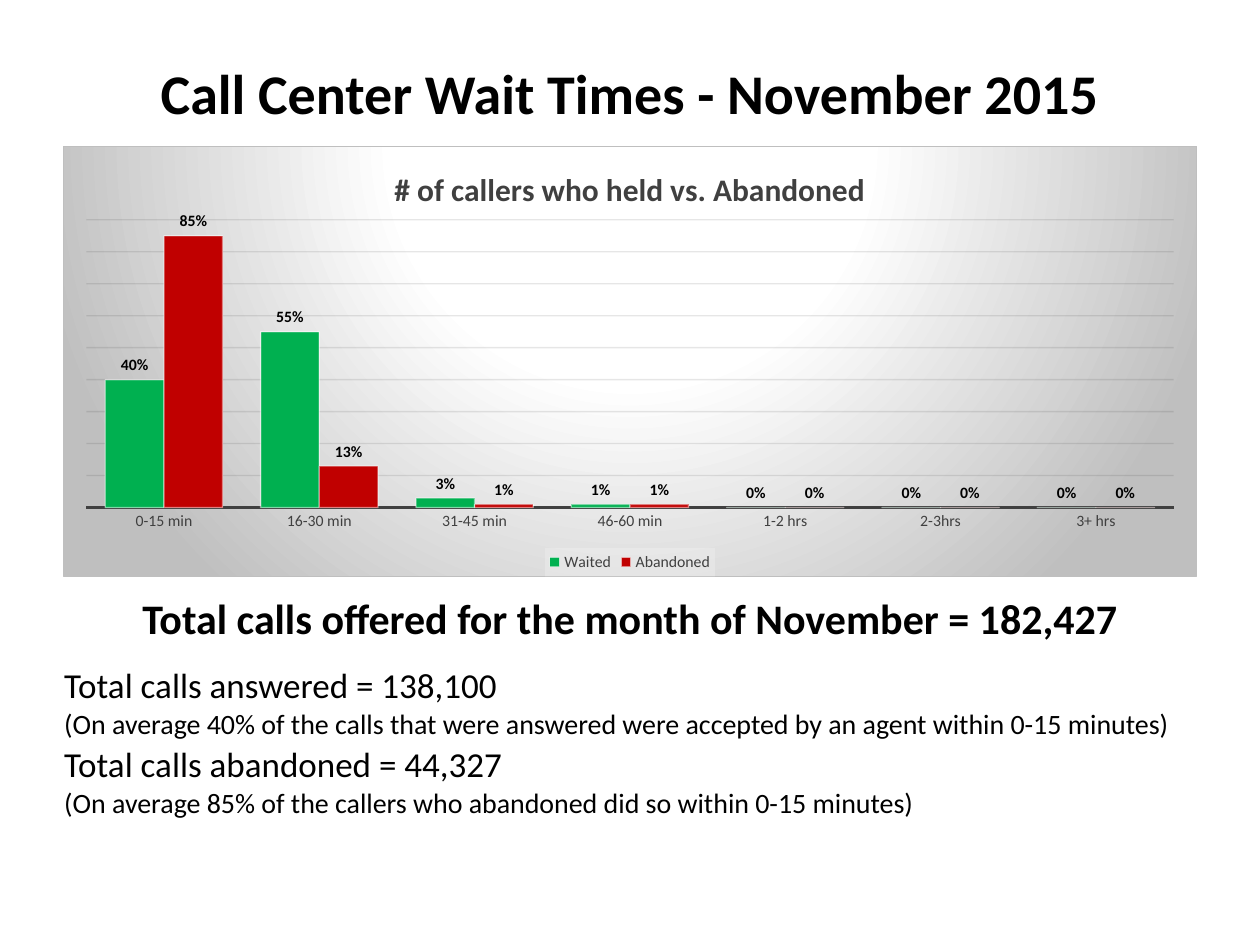
from dataclasses import dataclass

from lxml.etree import SubElement
from pptx import Presentation
from pptx.chart.data import CategoryChartData
from pptx.dml.color import RGBColor
from pptx.enum.chart import XL_CHART_TYPE, XL_LABEL_POSITION, XL_LEGEND_POSITION, XL_TICK_MARK
from pptx.enum.text import MSO_ANCHOR, PP_ALIGN
from pptx.oxml import parse_xml
from pptx.oxml.ns import nsdecls, qn
from pptx.util import Inches, Pt


@dataclass(frozen=True)
class Theme:
    font: str = "Calibri"
    black: str = "000000"
    dark: str = "404040"
    grid: str = "0D0D0D"
    edge: str = "BFBFBF"
    pale: str = "F2F2F2"
    white: str = "FFFFFF"
    title: int = 32
    total: int = 24
    chart_title: int = 18
    figure: int = 20
    remark: int = 16
    base: int = 10
    label: int = 9


THEME = Theme()
TITLE = "Call Center Wait Times - November 2015"
CHART_TITLE = "# of callers who held vs. Abandoned"
WAITS = ["0-15 min", "16-30 min", "31-45 min", "46-60 min", "1-2 hrs", "2-3hrs", "3+ hrs"]
SERIES = [
    ("Waited", "00B050", [0.4, 0.55, 0.03, 0.01, 0, 0, 0]),
    ("Abandoned", "C00000", [0.85, 0.13, 0.01, 0.01, 0, 0, 0]),
]
TOTALS = [
    (0.56, PP_ALIGN.CENTER, MSO_ANCHOR.TOP,
     [("Total calls offered for the month of November = 182,427", THEME.total, True)]),
    (0.61, PP_ALIGN.LEFT, MSO_ANCHOR.MIDDLE,
     [("Total calls answered = 138,100", THEME.figure, False),
      ("(On average 40% of the calls that were answered were accepted by an agent"
       " within 0-15 minutes)", THEME.remark, False)]),
    (0.61, PP_ALIGN.LEFT, MSO_ANCHOR.MIDDLE,
     [("Total calls abandoned = 44,327", THEME.figure, False),
      ("(On average 85% of the callers who abandoned did so within 0-15 minutes)",
       THEME.remark, False)]),
]
WIDTH, HEIGHT = Inches(10), Inches(7.5)
LEFT, SPAN = round(WIDTH * 0.05), round(WIDTH * 0.9)
TITLE_TOP, CHART_TOP, TABLE_TOP = Inches(0.3), Inches(1.16), Inches(4.71)
CHART_HEIGHT = Inches(3.42)
PLOT = {"x": 0.02, "y": 0.17, "w": 0.96, "h": 0.67}


def style(font, size, color=THEME.black, bold=False):
    font.name, font.size, font.bold = THEME.font, Pt(size), bold
    font.color.rgb = RGBColor.from_string(color)


def add_span(para, text, size, color=THEME.black, bold=False):
    span = para.add_run()
    span.text = text
    style(span.font, size, color, bold)


def set_line(line, color, width, opacity=100):
    line.color.rgb = RGBColor.from_string(color)
    line.width = Pt(width)
    if opacity < 100:
        shade = line.fill._xPr.find(qn("a:solidFill"))[0]
        SubElement(shade, qn("a:alpha"), val=str(opacity * 1000))


def shape_properties(body):
    return parse_xml(f'<c:spPr {nsdecls("c", "a")}>{body}</c:spPr>')


def decorate(chart):
    stops = "".join(
        f'<a:gs pos="{place * 1000}"><a:srgbClr val="{color}"/></a:gs>'
        for place, color in [(0, THEME.white), (39, THEME.white), (100, THEME.edge)])
    backdrop = shape_properties(
        f'<a:gradFill><a:gsLst>{stops}</a:gsLst><a:path path="circle">'
        '<a:fillToRect l="50000" t="-80000" r="50000" b="180000"/></a:path></a:gradFill>'
        f'<a:ln w="{Pt(0.75)}"><a:solidFill><a:srgbClr val="{THEME.edge}"/></a:solidFill></a:ln>')
    chart._chartSpace.find(qn("c:chart")).addnext(backdrop)

    panel = shape_properties(
        f'<a:solidFill><a:srgbClr val="{THEME.pale}"><a:alpha val="39000"/></a:srgbClr>'
        '</a:solidFill><a:ln><a:noFill/></a:ln>')
    chart.legend._element.find(qn("c:overlay")).addnext(panel)

    plot_area = chart._chartSpace.find(qn("c:chart")).find(qn("c:plotArea"))
    for old in plot_area.findall(qn("c:layout")):
        plot_area.remove(old)
    sizes = "".join(f'<c:{side} val="{share}"/>' for side, share in PLOT.items())
    plot_area.insert(0, parse_xml(
        f'<c:layout {nsdecls("c")}><c:manualLayout><c:layoutTarget val="inner"/>'
        f'<c:xMode val="edge"/><c:yMode val="edge"/>{sizes}</c:manualLayout></c:layout>'))


def add_wait_chart(page):
    data = CategoryChartData(number_format="0%")
    data.categories = WAITS
    for name, color, values in SERIES:
        data.add_series(name, values)
    chart = page.shapes.add_chart(
        XL_CHART_TYPE.COLUMN_CLUSTERED, LEFT, CHART_TOP, SPAN, CHART_HEIGHT, data).chart
    style(chart.font, THEME.base)

    chart.has_title = True
    para = chart.chart_title.text_frame.paragraphs[0]
    add_span(para, CHART_TITLE, THEME.chart_title, THEME.dark, True)
    chart.chart_title.include_in_layout = False

    chart.has_legend = True
    chart.legend.position = XL_LEGEND_POSITION.BOTTOM
    chart.legend.include_in_layout = False
    style(chart.legend.font, THEME.label, THEME.dark)

    waits = chart.category_axis
    waits.major_tick_mark = XL_TICK_MARK.NONE
    style(waits.tick_labels.font, THEME.label, THEME.dark)
    set_line(waits.format.line, THEME.dark, 1.5)

    shares = chart.value_axis
    shares.minimum_scale, shares.maximum_scale, shares.major_unit = 0, 0.9, 0.1
    shares.has_major_gridlines = True
    set_line(shares.major_gridlines.format.line, THEME.grid, 0.75, 10)
    shares.visible = False

    plot = chart.plots[0]
    plot.gap_width = 65
    plot.vary_by_categories = False
    for series, (name, color, values) in zip(plot.series, SERIES):
        series.format.fill.solid()
        series.format.fill.fore_color.rgb = RGBColor.from_string(color)
        set_line(series.format.line, THEME.white, 0.75, 50)
        labels = series.data_labels
        labels.show_value = True
        labels.number_format, labels.number_format_is_linked = "0%", False
        labels.position = XL_LABEL_POSITION.OUTSIDE_END
        style(labels.font, THEME.label, bold=True)
    decorate(chart)


def add_totals(page):
    height = Inches(sum(row[0] for row in TOTALS))
    table = page.shapes.add_table(len(TOTALS), 1, LEFT, TABLE_TOP, SPAN, height).table
    table.first_row = table.horz_banding = False
    for index, (row_height, align, anchor, lines) in enumerate(TOTALS):
        table.rows[index].height = Inches(row_height)
        cell = table.cell(index, 0)
        cell.fill.background()
        cell.vertical_anchor = anchor
        cell.margin_left = cell.margin_right = cell.margin_top = Inches(0.01)
        cell.margin_bottom = 0
        for number, (text, size, bold) in enumerate(lines):
            frame = cell.text_frame
            para = frame.add_paragraph() if number else frame.paragraphs[0]
            para.alignment = align
            add_span(para, text, size, bold=bold)


def main():
    deck = Presentation()
    deck.slide_width, deck.slide_height = WIDTH, HEIGHT
    page = deck.slides.add_slide(deck.slide_layouts[5])
    title = page.shapes.title
    title.left, title.top = LEFT, TITLE_TOP
    title.width, title.height = SPAN, CHART_TOP - TITLE_TOP
    title.text_frame.vertical_anchor = MSO_ANCHOR.MIDDLE
    para = title.text_frame.paragraphs[0]
    para.alignment = PP_ALIGN.CENTER
    add_span(para, TITLE, THEME.title, bold=True)
    add_wait_chart(page)
    add_totals(page)
    deck.save("out.pptx")


if __name__ == "__main__":
    main()
